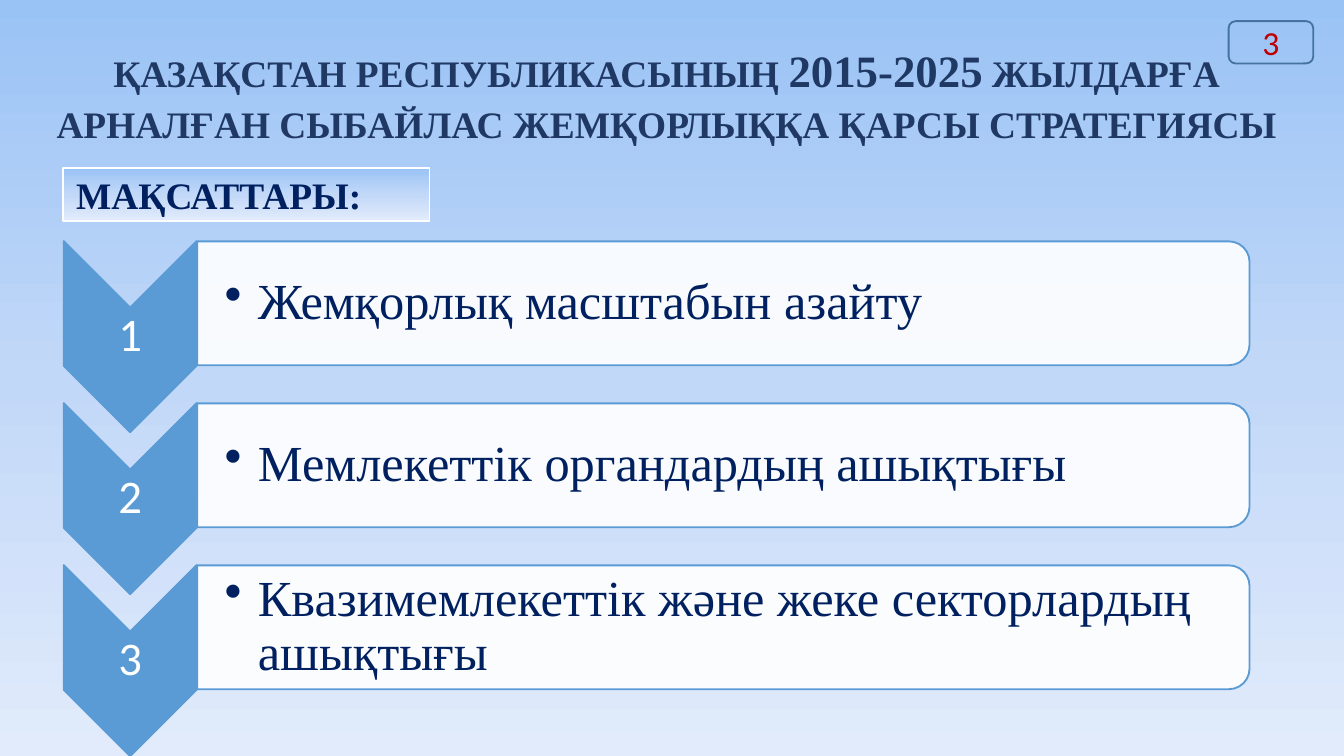
from pptx import Presentation
from pptx.dml.color import RGBColor
from pptx.enum.shapes import MSO_SHAPE as Shape
from pptx.enum.text import MSO_ANCHOR as Anchor, MSO_AUTO_SIZE as AutoSize, PP_ALIGN as Align
from pptx.oxml import parse_xml
from pptx.oxml.ns import nsdecls, qn
from pptx.oxml.xmlchemy import OxmlElement
from pptx.util import Cm, Pt

# Content
TITLE = [
    ("ҚАЗАҚСТАН РЕСПУБЛИКАСЫНЫҢ ", 20),
    ("2015-2025", 24),
    (" ЖЫЛДАРҒА АРНАЛҒАН СЫБАЙЛАС ЖЕМҚОРЛЫҚҚА ҚАРСЫ СТРАТЕГИЯСЫ", 20),
]
HEADING = "МАҚСАТТАРЫ:"
GOALS = [
    "Жемқорлық масштабын азайту",
    "Мемлекеттік органдардың ашықтығы",
    "Квазимемлекеттік және жеке секторлардың ашықтығы",
]
PAGE_NUMBER = "3"

# Look
SERIF, SANS = "Times New Roman", "Calibri"
TITLE_BLUE = RGBColor(0x20, 0x38, 0x64)
NAVY = RGBColor(0x00, 0x20, 0x60)
BLUE = RGBColor(0x5B, 0x9B, 0xD5)
STEEL = RGBColor(0x43, 0x73, 0x9E)
RED = RGBColor(0xC0, 0x00, 0x00)
WHITE = RGBColor(0xFF, 0xFF, 0xFF)
SKY = [(0, RGBColor(0x9A, 0xC3, 0xF5)), (50, RGBColor(0xC2, 0xD8, 0xF8)),
       (100, RGBColor(0xE1, 0xEB, 0xFB))]

# Rows, in centimetres
ROW_PITCH = 3.06
CHEVRON_X, CHEVRON_Y = 2.46, 6.36
BAR_X, BAR_Y = 13.67, 5.73


def set_all(target, values):
    for name, value in values.items():
        setattr(target, name, value)


def paint_gradient(fill, parent):
    """Swap a solid fill for the vertical sky gradient."""
    fill.solid()
    stops = "".join(f'<a:gs pos="{pos * 1000}"><a:srgbClr val="{color}"/></a:gs>'
                    for pos, color in SKY)
    gradient = parse_xml(f'<a:gradFill rotWithShape="1" {nsdecls("a")}><a:gsLst>{stops}</a:gsLst>'
                         '<a:lin ang="5400000" scaled="0"/></a:gradFill>')
    parent.replace(parent.find(qn("a:solidFill")), gradient)


def centred(x, y, width, height):
    return Cm(x - width / 2), Cm(y - height / 2), Cm(width), Cm(height)


def add_shape(page, kind, place, line, fill=None, rotation=0):
    shape = page.shapes.add_shape(kind, *place)
    shape.shadow.inherit = False
    shape.rotation = rotation
    if fill is None:
        shape.fill.background()
    else:
        shape.fill.solid()
        shape.fill.fore_color.rgb = fill
    shape.line.color.rgb = line
    shape.line.width = Pt(1)
    return shape


def add_span(para, text, size, color, font=SERIF, bold=False):
    span = para.add_run()
    span.text = text
    set_all(span.font, {"size": Pt(size), "name": font, "bold": bold})
    span.font.color.rgb = color


def write(box, text, size, color, font=SERIF, bold=False, align=Align.LEFT, spacing=1.0):
    set_all(box.text_frame, {"word_wrap": True, "vertical_anchor": Anchor.MIDDLE})
    para = box.text_frame.paragraphs[0]
    set_all(para, {"alignment": align, "line_spacing": spacing})
    add_span(para, text, size, color, font, bold)
    return para


def add_label(page, place, left_inset=0.05):
    box = page.shapes.add_textbox(*place)
    set_all(box.text_frame, {"margin_left": Cm(left_inset), "margin_right": Cm(0.05),
                             "margin_top": Cm(0.05), "margin_bottom": Cm(0.05)})
    return box


def add_bullet(para):
    props = para._p.get_or_add_pPr()
    props.set("marL", str(Cm(0.63)))
    props.set("indent", str(-Cm(0.63)))
    bullet = OxmlElement("a:buChar")
    bullet.set("char", "•")
    props.append(bullet)


def add_goal(page, index, text):
    shift = index * ROW_PITCH
    chevron_y, bar_y = CHEVRON_Y + shift, BAR_Y + shift

    # Numbered chevron pointing down
    add_shape(page, Shape.CHEVRON, centred(CHEVRON_X, chevron_y, 3.61, 2.51), BLUE, BLUE, 90)
    number = add_label(page, centred(CHEVRON_X, chevron_y, 2.51, 1.09))
    write(number, str(index + 1), 25, WHITE, SANS, align=Align.CENTER, spacing=0.9)

    # Bar with its right corners rounded
    bar = add_shape(page, Shape.ROUND_2_SAME_RECTANGLE,
                    centred(BAR_X, bar_y, 2.34, 19.89), BLUE, WHITE, 90)
    alpha = OxmlElement("a:alpha")
    alpha.set("val", "90000")
    bar._element.spPr.find(qn("a:solidFill"))[0].append(alpha)
    label = add_label(page, centred(BAR_X - 0.06, bar_y, 19.79, 2.11), 0.53)
    add_bullet(write(label, text, 27, NAVY, spacing=0.9))


def main():
    deck = Presentation()
    set_all(deck, {"slide_width": Cm(25.4), "slide_height": Cm(14.28)})
    page = deck.slides.add_slide(deck.slide_layouts[5])
    paint_gradient(page.background.fill, page.element.find(".//" + qn("p:bgPr")))

    # Title
    title = page.shapes.title
    set_all(title, {"left": Cm(0.79), "top": Cm(0.58), "width": Cm(23.62), "height": Cm(2.34)})
    set_all(title.text_frame, {"word_wrap": True, "vertical_anchor": Anchor.TOP,
                               "auto_size": AutoSize.NONE})
    para = title.text_frame.paragraphs[0]
    set_all(para, {"alignment": Align.CENTER, "line_spacing": 1.1})
    for text, size in TITLE:
        add_span(para, text, size, TITLE_BLUE, bold=True)

    # Heading
    heading = add_shape(page, Shape.RECTANGLE, (Cm(1.19), Cm(3.18), Cm(6.93), Cm(0.99)), WHITE)
    paint_gradient(heading.fill, heading._element.spPr)
    write(heading, HEADING, 20, NAVY, bold=True)

    # Goals
    for index, text in enumerate(GOALS):
        add_goal(page, index, text)

    # Page number
    badge = add_shape(page, Shape.ROUNDED_RECTANGLE, (Cm(23.22), Cm(0.4), Cm(1.6), Cm(0.8)), STEEL)
    write(badge, PAGE_NUMBER, 18, RED, SANS, align=Align.CENTER)

    deck.save("out.pptx")


if __name__ == "__main__":
    main()
